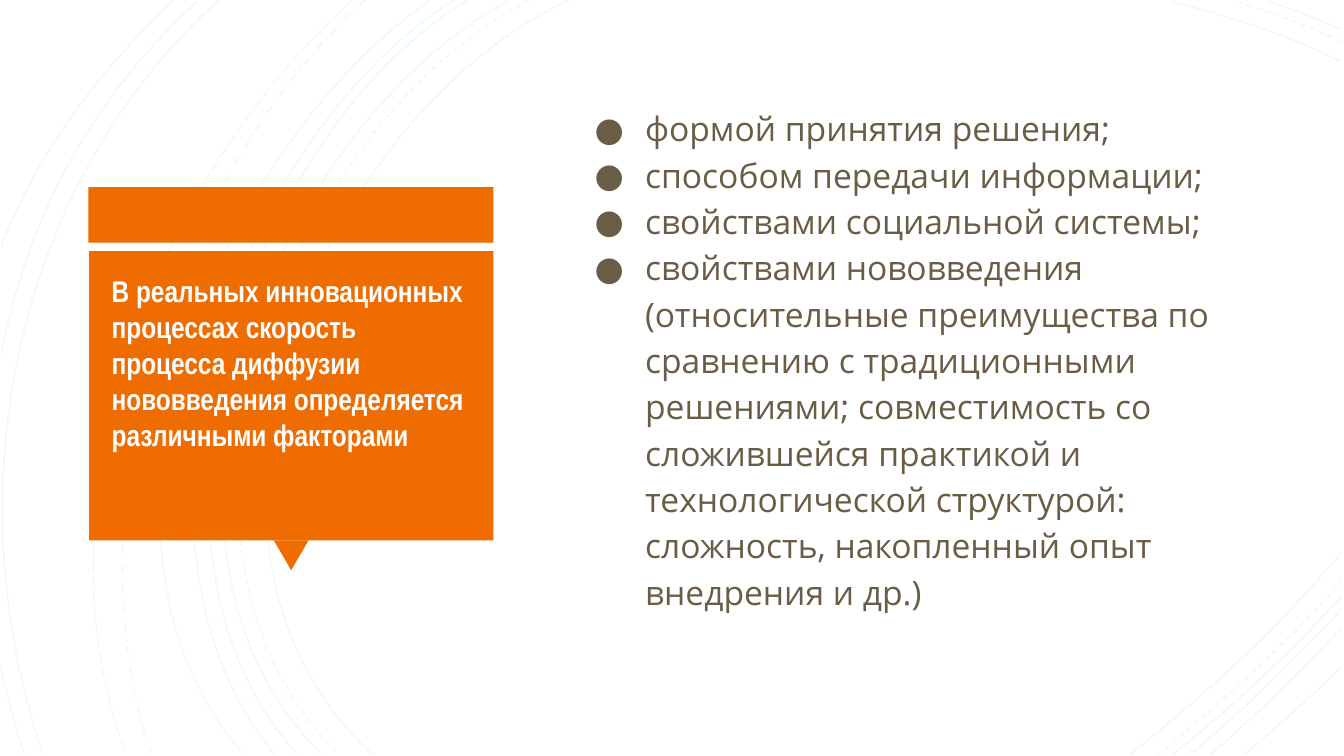
from lxml.etree import SubElement
from pptx import Presentation
from pptx.dml.color import RGBColor
from pptx.enum.dml import MSO_LINE
from pptx.enum.shapes import MSO_SHAPE
from pptx.enum.text import MSO_ANCHOR, MSO_AUTO_SIZE, PP_ALIGN
from pptx.oxml.ns import qn
from pptx.util import Pt

# Content
TITLE = ("В реальных инновационных процессах скорость процесса диффузии "
         "нововведения определяется различными факторами")
FACTORS = [
    "формой принятия решения;",
    "способом передачи информации;",
    "свойствами социальной системы;",
    "свойствами нововведения (относительные преимущества по сравнению с "
    "традиционными решениями; совместимость со сложившейся практикой и "
    "технологической структурой: сложность, накопленный опыт внедрения и др.)",
]

THEME = {
    "accent": RGBColor(0xEF, 0x6C, 0x00),
    "title": RGBColor(0xFF, 0xFF, 0xFF),
    "body": RGBColor(0x69, 0x5D, 0x46),
    "arc": RGBColor(0xA1, 0xE8, 0xD9),
    "arc_opacity": 20,
    "title_font": "Arial Narrow", "title_size": 16,
    "body_font": "Open Sans", "body_size": 18,
}

# Background arcs by line style: start, two control points, end (points)
ARCS = {
    (MSO_LINE.SOLID, 0.75): [
        [(305.3, 0), (169.9, 61.9), (77, 291.6), (199.4, 404)],
        [(718.6, 33.1), (690.5, 18.7), (657.4, 8.6), (627.8, 0.7)],
        [(605.5, 404), (645.8, 372.2), (685.4, 336.2), (718.6, 295.9)],
        [(272.9, 0), (145.4, 69.1), (59, 290.2), (172.1, 404)],
        [(718.6, 15.8), (705.6, 10.1), (692.6, 5), (679, 0.7)],
        [(628.6, 404), (660.2, 378.7), (691.2, 349.9), (718.6, 319.7)],
        [(250.6, 0), (131.8, 72), (59, 292.3), (159.1, 404)],
        [(637.9, 404), (666, 380.2), (693.4, 354.2), (718.6, 326.2)],
        [(243.4, 0), (124.6, 74.2), (52.6, 288), (146.9, 404)],
        [(648.7, 404), (673.2, 383), (697, 360), (718.6, 336.2)],
        [(230.4, 0), (117.4, 79.2), (28.8, 285.8), (130.3, 404)],
        [(666.7, 404), (684, 389.5), (702, 373.7), (718.6, 357.1)],
        [(117.4, 0), (5.8, 100.1), (-24.5, 265), (23, 404)],
        [(105.8, 0.7), (49.7, 51.8), (15.1, 115.2), (0.7, 189.4)],
        [(0, 355.7), (3.6, 372.2), (7.9, 388.8), (13, 404)],
        [(92.9, 0), (54, 37.4), (20.2, 80.6), (0.7, 131.8)],
    ],
    (MSO_LINE.DASH, 0.75): [
        [(283.7, 0), (154.1, 67.7), (66.2, 290.2), (181.4, 404)],
        [(718.6, 22.3), (700.6, 13.7), (680.4, 6.5), (661.7, 0.7)],
        [(619.9, 404.6), (654.5, 376.6), (688.3, 345.6), (718.6, 311.8)],
    ],
    (MSO_LINE.DASH_DOT, 1): [
        [(195.8, 0), (95, 90), (35.3, 275), (81.4, 404)],
    ],
    (MSO_LINE.LONG_DASH, 0.75): [
        [(189.4, 0), (85, 91.4), (15.8, 269.3), (67.7, 404)],
    ],
}

# Callout parts: shape, left, top, width, height, rotation (points, degrees)
CALLOUT = [
    (MSO_SHAPE.RECTANGLE, 47.4, 100.3, 216.9, 29.7, 0),
    (MSO_SHAPE.ISOSCELES_TRIANGLE, 146.7, 289.5, 18.6, 16, 180),
    (MSO_SHAPE.RECTANGLE, 47.7, 134.5, 216.6, 155, 0),
]
TITLE_BOX = (52.6, 139, 206.6, 145.4)
BODY_BOX = (302.4, 47.5, 370.8, 310.3)
INSET = 7.2


def add_arc(group, points, dash, width):
    """Draw one cubic curve; its control points are laid as a line first."""
    start, *rest = [(Pt(x), Pt(y)) for x, y in points]
    builder = group.shapes.build_freeform(*start)
    builder.add_line_segments(rest, close=False)
    arc = builder.convert_to_shape()
    outline = next(arc._element.iter(qn("a:path")))
    curve = SubElement(outline, qn("a:cubicBezTo"))
    for segment in outline.findall(qn("a:lnTo")):
        curve.append(segment[0])
        outline.remove(segment)
    arc.shadow.inherit = False
    arc.fill.background()
    arc.line.color.rgb = THEME["arc"]
    arc.line.width = Pt(width)
    arc.line.dash_style = dash
    color = next(arc.line._ln.iter(qn("a:srgbClr")))
    SubElement(color, qn("a:alpha"), val=str(THEME["arc_opacity"] * 1000))


def add_callout_part(group, kind, left, top, width, height, rotation):
    part = group.shapes.add_shape(kind, Pt(left), Pt(top), Pt(width), Pt(height))
    part.rotation = rotation
    part.shadow.inherit = False
    part.fill.solid()
    part.fill.fore_color.rgb = THEME["accent"]
    part.line.fill.background()


def fill_placeholder(box, place, paragraphs, role, line_spacing, bold=False):
    box.left, box.top, box.width, box.height = map(Pt, place)
    frame = box.text_frame
    frame.text = "\n".join(paragraphs)
    frame.word_wrap = True
    frame.auto_size = MSO_AUTO_SIZE.NONE
    frame.vertical_anchor = MSO_ANCHOR.TOP
    frame.margin_left = frame.margin_right = Pt(INSET)
    frame.margin_top = frame.margin_bottom = Pt(INSET)
    for para in frame.paragraphs:
        para.alignment = PP_ALIGN.LEFT
        para.line_spacing = line_spacing
        para.space_before = para.space_after = Pt(0)
        for span in para.runs:
            span.font.name = THEME[role + "_font"]
            span.font.size = Pt(THEME[role + "_size"])
            span.font.color.rgb = THEME[role]
            span.font.bold = bold
    # Bring the text in front of the drawn shapes
    box._element.getparent().append(box._element)


def add_bullet(para):
    props = para._p.get_or_add_pPr()
    props.set("marL", str(Pt(36)))
    props.set("indent", str(Pt(-27)))
    color = SubElement(props, qn("a:buClr"))
    SubElement(color, qn("a:srgbClr"), val=str(THEME["body"]))
    SubElement(props, qn("a:buFont"), typeface=THEME["body_font"])
    SubElement(props, qn("a:buChar"), char="●")


def main():
    deck = Presentation()
    deck.slide_width, deck.slide_height = Pt(720), Pt(405)
    page = deck.slides.add_slide(deck.slide_layouts[1])

    # Background arcs
    arcs = page.shapes.add_group_shape()
    for (dash, width), curves in ARCS.items():
        for points in curves:
            add_arc(arcs, points, dash, width)

    # Orange callout
    callout = page.shapes.add_group_shape()
    for part in CALLOUT:
        add_callout_part(callout, *part)

    # Title and list of factors
    title, body = page.shapes.title, page.placeholders[1]
    fill_placeholder(title, TITLE_BOX, [TITLE], "title", 1.0, bold=True)
    fill_placeholder(body, BODY_BOX, FACTORS, "body", 1.15)
    for para in body.text_frame.paragraphs:
        add_bullet(para)

    deck.save("out.pptx")


if __name__ == "__main__":
    main()
